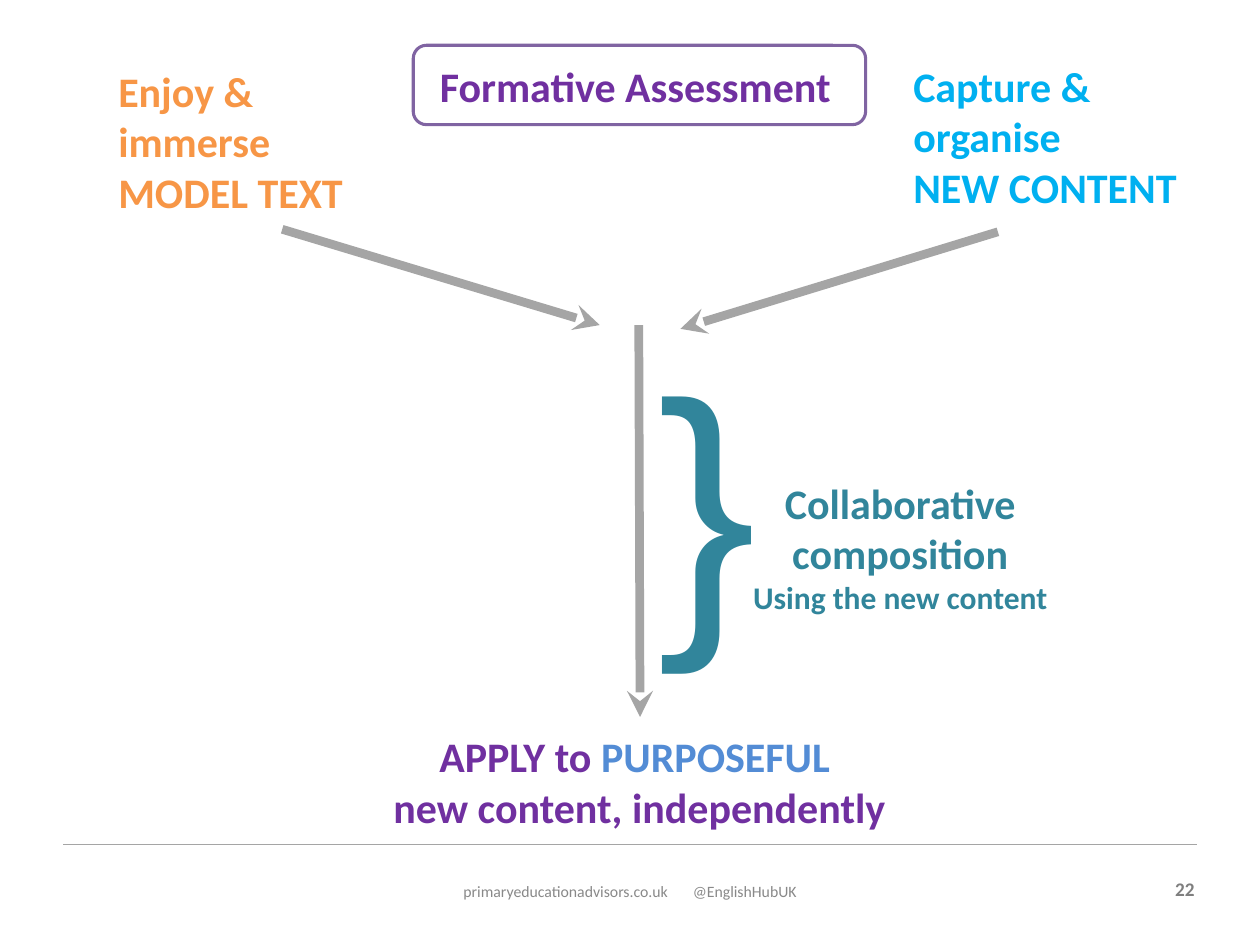
from typing import NamedTuple

from lxml.etree import SubElement
from pptx import Presentation
from pptx.dml.color import RGBColor
from pptx.enum.shapes import MSO_CONNECTOR as Connector, MSO_SHAPE as Shape
from pptx.enum.text import PP_ALIGN as Align
from pptx.oxml.ns import qn
from pptx.util import Inches, Pt

COLOURS = {
    "white": "FFFFFF", "grey": "A5A5A5", "number": "7F7F7F", "footer": "898989",
    "purple": "7030A0", "border": "8064A2", "blue": "538CD5",
    "orange": "F79646", "cyan": "00B0F0", "teal": "31859B",
}


class Span(NamedTuple):
    text: str
    colour: str
    size: float = 24
    bold: bool = True
    font: str = "Calibri"


class Line(NamedTuple):
    start: tuple[float, float]
    end: tuple[float, float]
    width: float = 5
    arrow: bool = True


def colour(name: str) -> RGBColor:
    return RGBColor.from_string(COLOURS[name])


def add_text(page, place: tuple, *paras: list[Span], align=Align.LEFT, tab: float = 0) -> None:
    """Add a text box with one paragraph for each list of spans."""
    box = page.shapes.add_textbox(*map(Inches, place))
    frame = box.text_frame
    frame.word_wrap = True
    for index, spans in enumerate(paras):
        para = frame.paragraphs[0] if index == 0 else frame.add_paragraph()
        para.alignment = align
        if tab:
            stops = SubElement(para._p.get_or_add_pPr(), qn("a:tabLst"))
            SubElement(stops, qn("a:tab"), pos=str(Inches(tab)), algn="l")
        for span in spans:
            run = para.add_run()
            run.text = span.text
            run.font.name = span.font
            run.font.size = Pt(span.size)
            run.font.bold = span.bold
            run.font.color.rgb = colour(span.colour)


def add_line(page, line: Line) -> None:
    connector = page.shapes.add_connector(
        Connector.STRAIGHT, *map(Inches, line.start + line.end))
    connector.line.color.rgb = colour("grey")
    connector.line.width = Pt(line.width)
    if line.arrow:
        SubElement(connector.line._get_or_add_ln(), qn("a:tailEnd"), type="stealth")
    SubElement(connector._element.spPr, qn("a:effectLst"))


def add_frame(page, place: tuple) -> None:
    frame = page.shapes.add_shape(Shape.ROUNDED_RECTANGLE, *map(Inches, place))
    frame.shadow.inherit = False
    frame.fill.solid()
    frame.fill.fore_color.rgb = colour("white")
    frame.line.color.rgb = colour("border")
    frame.line.width = Pt(1.75)


def main() -> None:
    deck = Presentation()
    deck.slide_width, deck.slide_height = Inches(10), Inches(7.5)
    page = deck.slides.add_slide(deck.slide_layouts[6])

    # Footer
    add_line(page, Line((0.5, 6.7), (9.5, 6.7), width=0.75, arrow=False))
    add_text(page, (9.2, 6.91, 0.38, 0.29), [Span("22", "number", 11)], align=Align.RIGHT)
    add_text(page, (3.58, 6.95, 3.11, 0.4),
             [Span("primaryeducationadvisors.co.uk\t@EnglishHubUK", "footer", 9, bold=False)],
             tab=1.82)

    # Title
    add_frame(page, (3.28, 0.36, 3.59, 0.63))
    add_text(page, (1.29, 0.43, 7.58, 0.51),
             [Span("Formative Assessment ", "purple")], align=Align.CENTER)

    # Two starting points
    add_text(page, (0.84, 0.47, 2.05, 1.31),
             [Span("Enjoy & immerse", "orange")], [Span("MODEL TEXT", "orange")])
    add_text(page, (7.15, 0.43, 2.5, 1.31),
             [Span("Capture & organise", "cyan")], [Span("NEW CONTENT", "cyan")])

    # Arrows that meet and lead down
    for arrow in (Line((2.24, 1.82), (4.76, 2.58)),
                  Line((7.92, 1.84), (5.4, 2.61)),
                  Line((5.07, 2.58), (5.08, 5.69))):
        add_line(page, arrow)

    # Collaborative stage with its brace
    add_text(page, (5.12, 2.45, 0.47, 2.96),
             [Span("}", "teal", 170, bold=False, font="Arial")])
    add_text(page, (5.78, 3.74, 2.73, 1.21),
             [Span("Collaborative composition", "teal")],
             [Span("Using the new content", "teal", 18)], align=Align.CENTER)

    # Outcome
    add_text(page, (2.05, 5.75, 6.05, 0.91),
             [Span("APPLY to ", "purple"), Span("PURPOSEFUL ", "blue")],
             [Span("new content, independently", "purple")], align=Align.CENTER)

    deck.save("out.pptx")


if __name__ == "__main__":
    main()
